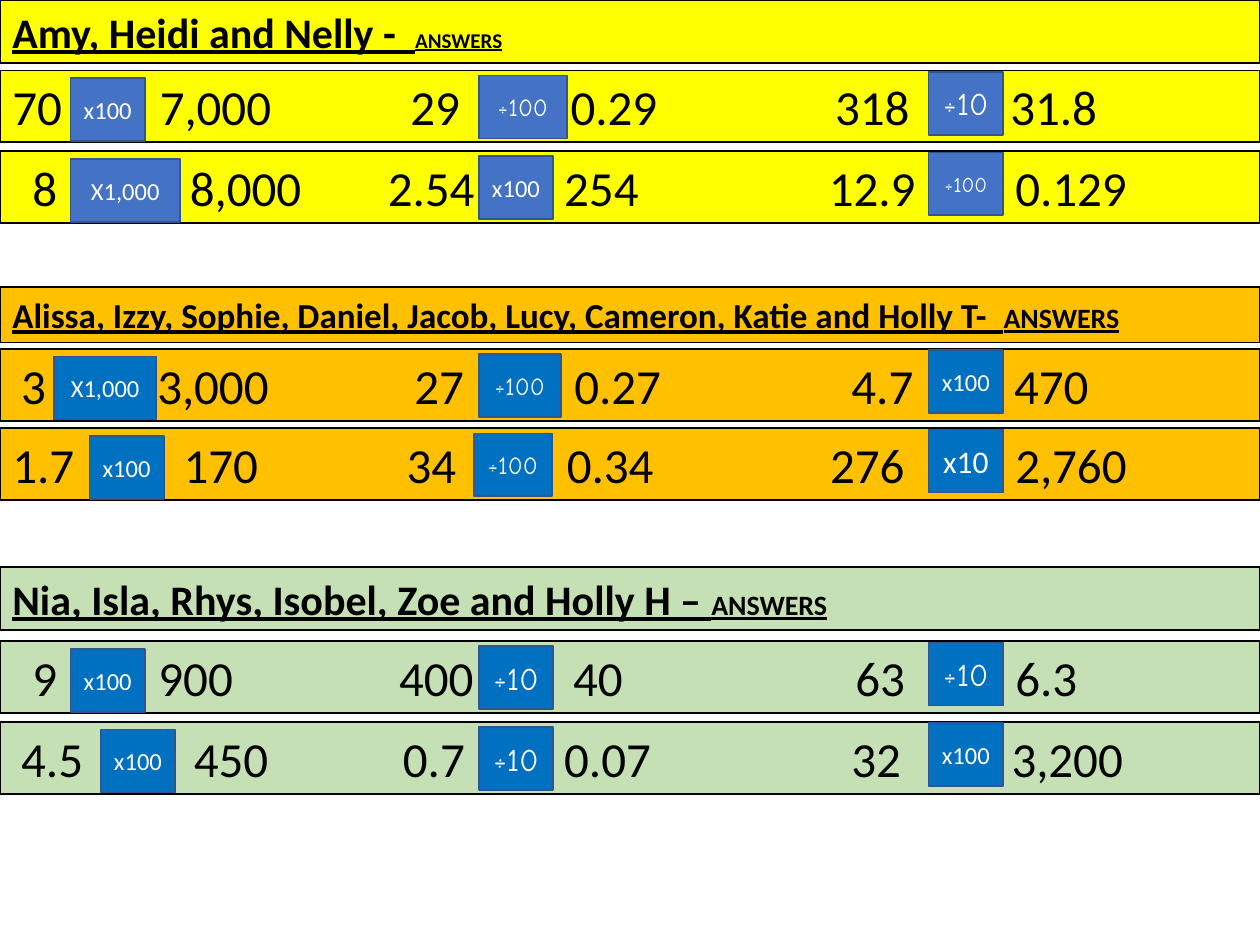
from lxml.etree import SubElement
from pptx import Presentation
from pptx.dml.color import RGBColor as RGB
from pptx.enum.shapes import MSO_SHAPE as SHAPE
from pptx.enum.text import MSO_ANCHOR as ANCHOR, MSO_AUTO_SIZE as FIT, PP_ALIGN as ALIGN
from pptx.oxml.ns import qn
from pptx.util import Inches, Pt

COLORS = {"yellow": "FFFF00", "orange": "FFC000", "green": "C5E0B4", "blue": "4472C4",
          "azure": "0070C0", "edge": "325491", "black": "000000", "white": "FFFFFF"}
COLS, ROWS = 100, 75
TITLE = {"bold": True, "underline": True}
BADGE_H, BADGE_DROPS = 5, (0.6, 0.4, 0.1)

GROUPS = [
    {"fill": "yellow", "badge": "blue", "top": 0, "height": 5,
     "title": [("Amy, Heidi and Nelly -  ", 24), ("ANSWERS", 12)],
     "sums": [
         (5.6, ["70", "7,000", "29", "0.29", "318", "31.8"],
          [0, 11.7, 31.6, 44.3, 65.3, 79.2],
          [("x100", 5.6, 5.9, 14), ("÷100", 38, 7, 14), ("÷10", 73.7, 5.9, 18)]),
         (12, ["8", "8,000", "2.54", "254", "12.9", "0.129"],
          [1.6, 14.1, 29.8, 43.8, 64.8, 79.6],
          [("X1,000", 5.6, 8.7, 14), ("x100", 38, 5.9, 14), ("÷100", 73.7, 5.9, 12)])]},
    {"fill": "orange", "badge": "azure", "top": 22.8, "height": 4.4,
     "title": [("Alissa, Izzy, Sophie, Daniel, Jacob, Lucy, Cameron, Katie and Holly T-  ", 20),
               ("ANSWERS", 16)],
     "sums": [
         (27.7, ["3", "3,000", "27", "0.27", "4.7", "470"],
          [0.7, 11.5, 31.9, 44.6, 66.6, 79.5],
          [("X1,000", 4.3, 8.1, 14), ("÷100", 38, 6.5, 14), ("x100", 73.7, 5.9, 14)]),
         (34, ["1.7", "170", "34", "0.34", "276", "2,760"],
          [0, 13.6, 31.3, 44, 64.9, 79.6],
          [("x100", 7.1, 5.9, 14), ("÷100", 37.6, 6.2, 14), ("x10", 73.7, 5.9, 18)])]},
    {"fill": "green", "badge": "azure", "top": 45, "height": 5,
     "title": [("Nia, Isla, Rhys, Isobel, Zoe and Holly H – ", 24), ("ANSWERS", 16)],
     "sums": [
         (50.9, ["9", "900", "400", "40", "63", "6.3"],
          [1.6, 11.6, 30.7, 44.5, 66.9, 79.6],
          [("x100", 5.6, 5.9, 14), ("÷10", 38, 5.9, 18), ("÷10", 73.7, 5.9, 18)]),
         (57.3, ["4.5", "450", "0.7", "0.07", "32", "3,200"],
          [0.7, 14.4, 31, 43.8, 66.6, 79.3],
          [("x100", 8, 5.9, 14), ("÷10", 38, 5.9, 18), ("x100", 73.7, 5.9, 14)])]},
]


class Sheet:
    """Draws bands, sums and operator badges on a fine grid."""

    def __init__(self, prs):
        self.s = prs.slides.add_slide(prs.slide_layouts[6])
        self.cw = prs.slide_width / COLS
        self.rh = prs.slide_height / ROWS

    def box(self, x, y, w, h, fill, line, frame):
        sp = self.s.shapes.add_shape(SHAPE.RECTANGLE, int(x * self.cw), int(y * self.rh),
                                     int(w * self.cw), int(h * self.rh))
        sp.shadow.inherit = False
        sp.fill.solid()
        sp.fill.fore_color.rgb = RGB.from_string(COLORS[fill])
        sp.line.color.rgb = RGB.from_string(COLORS[line])
        sp.line.width = Pt(1)
        tf = sp.text_frame
        for name, value in {"word_wrap": True, **frame}.items():
            setattr(tf, name, value)
        return tf.paragraphs[0]

    def run(self, p, text, size, color="black", **extra):
        r = p.add_run()
        r.text = text
        r.font.color.rgb = RGB.from_string(COLORS[color])
        for name, value in {"name": "Calibri", "size": Pt(size), **extra}.items():
            setattr(r.font, name, value)

    def band(self, y, h, fill):
        p = self.box(0, y, COLS, h, fill, "black",
                     {"vertical_anchor": ANCHOR.TOP, "auto_size": FIT.SHAPE_TO_FIT_TEXT})
        p.alignment = ALIGN.LEFT
        return p

    def title(self, y, h, fill, parts):
        p = self.band(y, h, fill)
        for text, size in parts:
            self.run(p, text, size, **TITLE)

    def sums(self, y, fill, numbers, stops):
        p = self.band(y, 5.7, fill)
        tabs = SubElement(p._p.get_or_add_pPr(), qn("a:tabLst"))
        for stop in filter(None, stops):
            SubElement(tabs, qn("a:tab"), pos=str(int(stop * self.cw)), algn="l")
        lead = "\t" if stops[0] else ""
        self.run(p, lead + "\t".join(numbers), 28)

    def badge(self, x, y, w, fill, label, size):
        p = self.box(x, y, w, BADGE_H, fill, "edge", {"vertical_anchor": ANCHOR.MIDDLE})
        p.alignment = ALIGN.CENTER
        font = "Comic Neue" if label.startswith("÷") else "Calibri"
        self.run(p, label, size, "white", name=font)


def main():
    prs = Presentation()
    prs.slide_width, prs.slide_height = Inches(10), Inches(7.5)
    sheet = Sheet(prs)
    for g in GROUPS:
        sheet.title(g["top"], g["height"], g["fill"], g["title"])
        for y, numbers, stops, badges in g["sums"]:
            sheet.sums(y, g["fill"], numbers, stops)
            for (label, x, w, size), drop in zip(badges, BADGE_DROPS):
                sheet.badge(x, y + drop, w, g["badge"], label, size)
    prs.save("out.pptx")


if __name__ == "__main__":
    main()
